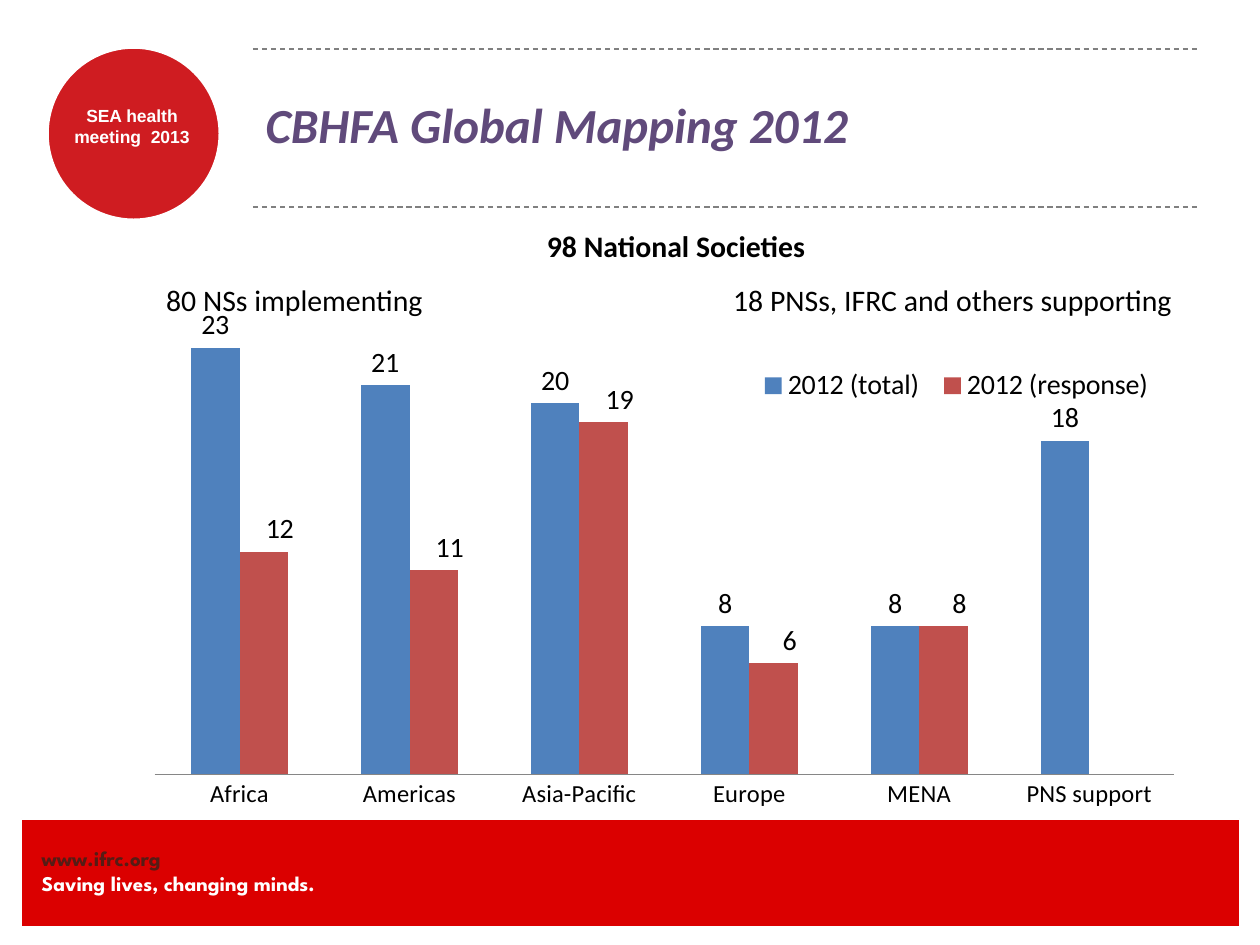
from lxml import etree
from pptx import Presentation
from pptx import util as u
from pptx.chart.data import CategoryChartData
from pptx.dml.color import RGBColor
from pptx.enum import chart as charts, dml, shapes, text
from pptx.oxml import parse_xml
from pptx.oxml.ns import nsdecls, qn

Cm, Pt = u.Cm, u.Pt


def color(hex_string):
    return RGBColor.from_string(hex_string)


def style(font, size, hex_string, name="Calibri", bold=False, italic=False):
    font.size, font.name, font.bold, font.italic = Pt(size), name, bold, italic
    font.color.rgb = color(hex_string)


def add_panel(slide, kind, box, fill, line_width):
    shape = slide.shapes.add_shape(kind, *map(Cm, box))
    shape.shadow.inherit = False
    shape.fill.solid()
    shape.fill.fore_color.rgb = color(fill)
    shape.line.color.rgb = color("FFFFFF")
    shape.line.width = Pt(line_width)


def add_text(slide, box, lines, margin=None):
    frame = slide.shapes.add_textbox(*map(Cm, box)).text_frame
    frame.word_wrap = True
    if margin is not None:
        frame.margin_left = frame.margin_right = Cm(margin)
        frame.margin_top = frame.margin_bottom = Cm(margin)
    frame.text = "\n".join(lines)
    return frame.paragraphs


def add_footer(slide, box):
    left, top, width, height = box
    add_panel(slide, shapes.MSO_SHAPE.RECTANGLE, box, "DB0000", 0.75)
    paragraphs = add_text(slide, (left + 0.41, top + 0.53, 8.69, 1.02),
                          ["www.ifrc.org", "Saving lives, changing minds."], margin=0)
    for paragraph, tint in zip(paragraphs, ("551C15", "FFFFFF")):
        style(paragraph.font, 12, tint, "League Spartan", bold=True)


def add_badge(slide, box):
    left, top, width, height = box
    add_panel(slide, shapes.MSO_SHAPE.OVAL, box, "CF1C21", 2.5)
    paragraph = add_text(slide, (left + 0.13, top + 1.17, 3.18, 0.86),
                         ["SEA health meeting  2013"], margin=0)[0]
    paragraph.alignment = text.PP_ALIGN.CENTER
    style(paragraph.font, 10, "FFFFFF", "Arial", bold=True)


def add_title(slide, box):
    left, top, width, height = box
    # Dashed rules above and below
    for y in (top + 0.08, top + height + 0.08):
        rule = slide.shapes.add_connector(shapes.MSO_CONNECTOR.STRAIGHT, Cm(left), Cm(y),
                                          Cm(left + width), Cm(y))
        rule.line.color.rgb = color("808080")
        rule.line.width = Pt(0.75)
        rule.line.dash_style = dml.MSO_LINE.DASH
        etree.SubElement(rule._element.spPr, qn("a:effectLst"))
    # Title text
    title = slide.shapes.title
    title.left, title.top, title.width, title.height = map(Cm, box)
    title.text_frame.text = "CBHFA Global Mapping 2012"
    title.text_frame.vertical_anchor = text.MSO_ANCHOR.MIDDLE
    paragraph = title.text_frame.paragraphs[0]
    paragraph.alignment = text.PP_ALIGN.LEFT
    style(paragraph.font, 28, "604A7B", bold=True, italic=True)


def add_summary(slide, box):
    heading, split = add_text(slide, box, [
        "98 National Societies",
        "80 NSs implementing\t18 PNSs, IFRC and others supporting"])
    heading.alignment = text.PP_ALIGN.CENTER
    split._p.get_or_add_pPr().append(parse_xml(
        f'<a:tabLst {nsdecls("a")}><a:tab pos="{Cm(11.43)}" algn="l"/></a:tabLst>'))
    for paragraph in (heading, split):
        paragraph.line_spacing = 1.5
        style(paragraph.font, 17, "000000", bold=paragraph is heading)


def manual_layout(x, y, w=None, h=None, inner=False):
    """Layout element: an offset when only x and y are given, otherwise a box."""
    parts = '<c:layoutTarget val="inner"/>' if inner else ""
    if w is not None:
        parts += '<c:xMode val="edge"/><c:yMode val="edge"/>'
    for tag, value in zip("xywh", (x, y, w, h)):
        if value is not None:
            parts += f'<c:{tag} val="{value}"/>'
    return parse_xml(f'<c:layout {nsdecls("c")}><c:manualLayout>{parts}'
                     '</c:manualLayout></c:layout>')


def set_layout(element, layout, after=None):
    for old in element.findall(qn("c:layout")):
        element.remove(old)
    if after is None:
        element.insert(0, layout)
    else:
        element.find(qn(after)).addnext(layout)


def add_mapping_chart(slide, box):
    totals = (23, 21, 20, 8, 8, 18)
    responses = (12, 11, 19, 6, 8, None)
    data = CategoryChartData()
    data.categories = ["Africa", "Americas", "Asia-Pacific", "Europe", "MENA", "PNS support"]
    data.add_series("2012 (total)", totals)
    data.add_series("2012 (response)", responses)
    chart = slide.shapes.add_chart(charts.XL_CHART_TYPE.COLUMN_CLUSTERED,
                                   *map(Cm, box), data).chart
    style(chart.font, 10, "000000")
    chart.has_title = False

    # Axes
    chart.value_axis.visible = False
    chart.value_axis.has_major_gridlines = False
    chart.value_axis.minimum_scale, chart.value_axis.maximum_scale = 0, 25
    axis = chart.category_axis
    axis.major_tick_mark = charts.XL_TICK_MARK.NONE
    axis.format.line.color.rgb = color("868686")
    style(axis.tick_labels.font, 14, "000000")

    # Legend inside the plot, above the last column
    chart.has_legend = True
    chart.legend.position = charts.XL_LEGEND_POSITION.TOP
    chart.legend.include_in_layout = False
    style(chart.legend.font, 16, "000000")
    set_layout(chart.legend._element, manual_layout(0.58, 0.21, 0.39, 0.07),
               after="c:legendPos")

    # Columns and value labels
    plot = chart.plots[0]
    plot.gap_width, plot.overlap, plot.vary_by_categories = 150, 0, False
    for series, tint in zip(plot.series, ("4F81BD", "C0504D")):
        series.format.fill.solid()
        series.format.fill.fore_color.rgb = color(tint)
        labels = series.data_labels
        labels.show_value = True
        labels.position = charts.XL_LABEL_POSITION.OUTSIDE_END
        style(labels.font, 16, "000000")

    # Response labels sit a little to the right of their columns
    response = plot.series[1]
    for index, value in enumerate(responses):
        if value is not None:
            label = response.points[index].data_label
            label.position = charts.XL_LABEL_POSITION.OUTSIDE_END
            style(label.font, 16, "000000")
    for element in response._element.iter(qn("c:dLbl")):
        set_layout(element, manual_layout(round(0.32 / box[2], 3), 0), after="c:idx")

    set_layout(chart._chartSpace.chart.plotArea,
               manual_layout(0.02, 0.115, 0.96, 0.805, inner=True))


def main():
    presentation = Presentation()
    presentation.slide_width, presentation.slide_height = Cm(25.4), Cm(19.05)
    slide = presentation.slides.add_slide(presentation.slide_layouts[5])
    add_footer(slide, (0.43, 16.51, 24.56, 2.18))
    add_badge(slide, (0.94, 0.94, 3.51, 3.51))
    add_title(slide, (5.1, 0.91, 19.05, 3.18))
    add_summary(slide, (3.1, 4.11, 21.06, 2.44))
    add_mapping_chart(slide, (2.69, 4.93, 21.41, 11.61))
    presentation.save("out.pptx")


if __name__ == "__main__":
    main()
